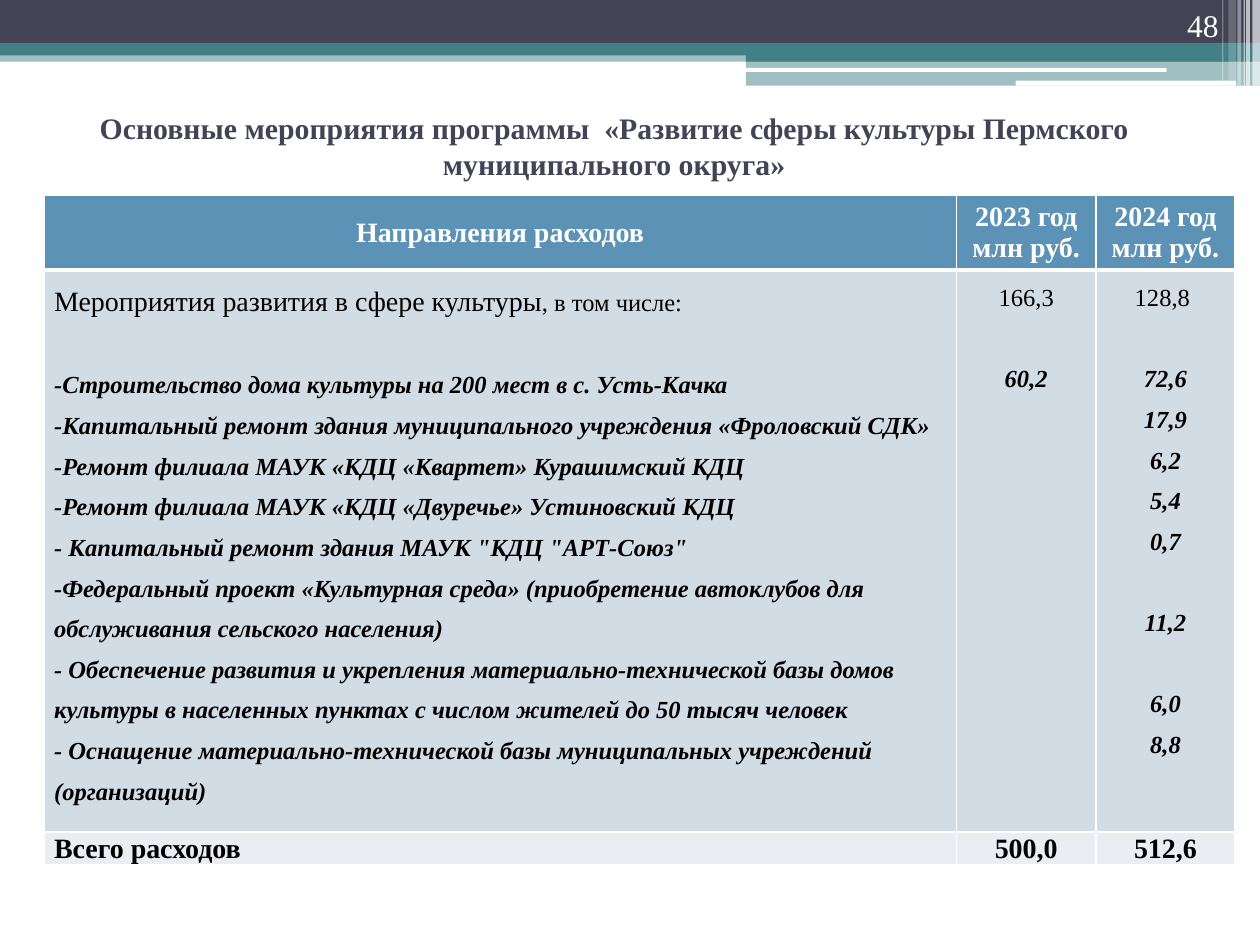
from lxml import etree
from pptx import Presentation
from pptx.dml.color import RGBColor
from pptx.enum.shapes import MSO_SHAPE
from pptx.enum.text import MSO_ANCHOR, PP_ALIGN
from pptx.oxml.ns import qn
from pptx.util import Inches, Pt

RECT, ROUND = MSO_SHAPE.RECTANGLE, MSO_SHAPE.ROUNDED_RECTANGLE
LEFT, CENTER, RIGHT = PP_ALIGN.LEFT, PP_ALIGN.CENTER, PP_ALIGN.RIGHT
TOP, MIDDLE, BOTTOM = MSO_ANCHOR.TOP, MSO_ANCHOR.MIDDLE, MSO_ANCHOR.BOTTOM
FONT = "Times New Roman"
COLORS = {
    "navy": "424456", "teal": "438086", "white": "FFFFFF", "black": "000000",
    "header": "5C92B5", "body": "D2DCE5", "total": "EAEEF3",
}
BANDS = [
    (0, 0.4, 10, 0.09, "teal", 50),
    (0, 0, 10, 0.34, "navy", 100),
    (0, 0.34, 10, 0.1, "teal", 100),
    (5.92, 0.39, 4.08, 0.1, "teal", 100),
    (5.92, 0.48, 4.08, 0.2, "teal", 50),
]
PILLS = [(5.91, 0.54, 3.35, 0.03), (8.06, 0.64, 1.75, 0.04)]
STRIPES = [
    (9.94, 0.06, 0.68, 65), (9.89, 0.03, 0.68, 65), (9.87, 0.01, 0.68, 60),
    (9.82, 0.03, 0.68, 40), (9.75, 0.06, 0.64, 20), (9.7, 0.01, 0.64, 30),
]
COL_WIDTHS = [7.24, 1.11, 1.1]
ROW_HEIGHTS = [0.58, 4.46, 0.26]
HEADERS = [["Направления расходов"], ["2023 год", "млн руб."], ["2024 год", "млн руб."]]
TOTALS = ["Всего расходов", "500,0", "512,6"]
MEASURES = [
    "-Строительство дома культуры на 200 мест в с. Усть-Качка",
    "-Капитальный ремонт здания муниципального учреждения «Фроловский СДК»",
    "-Ремонт филиала МАУК «КДЦ «Квартет» Курашимский КДЦ",
    "-Ремонт филиала МАУК «КДЦ «Двуречье» Устиновский КДЦ",
    '- Капитальный ремонт здания МАУК "КДЦ "АРТ-Союз"',
    "-Федеральный проект «Культурная среда» (приобретение автоклубов для "
    "обслуживания сельского населения)",
    "- Обеспечение развития и укрепления материально-технической базы домов "
    "культуры в населенных пунктах с числом жителей до 50 тысяч человек",
    "- Оснащение материально-технической базы муниципальных учреждений (организаций)",
]
VALUES_2024 = ["72,6", "17,9", "6,2", "5,4", "0,7", "11,2", "6,0", "8,8"]
AFTER_GAP = {"60,2", "72,6", "11,2", "6,0", MEASURES[0]}
LINE_GAP = 23.2


def rgb(name):
    """Return the named colour."""
    return RGBColor.from_string(COLORS[name])


def add_bar(s, x, y, w, h, color, alpha=100, shape=RECT):
    """Add a plain bar with the given opacity in percent."""
    sp = s.shapes.add_shape(shape, Inches(x), Inches(y), Inches(w), Inches(h))
    sp.shadow.inherit = False
    sp.fill.solid()
    sp.fill.fore_color.rgb = rgb(color)
    sp.line.fill.background()
    if alpha < 100:
        clr = sp.element.find(".//" + qn("a:srgbClr"))
        etree.SubElement(clr, qn("a:alpha"), val=str(alpha * 1000))


def add_text(tf, text, new=True, size=14, color="black", bold=False,
             italic=False, align=LEFT, spacing=None, before=0):
    """Write text as a paragraph, or as one more run of the last one."""
    p = tf.paragraphs[-1]
    if new:
        if p.runs:
            p = tf.add_paragraph()
        p.alignment = align
        p.line_spacing = spacing
        p.space_before = Pt(before)
    r = p.add_run()
    r.text = text
    r.font.name, r.font.size = FONT, Pt(size)
    r.font.bold, r.font.italic = bold, italic
    r.font.color.rgb = rgb(color)


def add_box(s, x, y, w, h, anchor):
    """Add a wrapping text box and return its text frame."""
    tf = s.shapes.add_textbox(Inches(x), Inches(y), Inches(w), Inches(h)).text_frame
    tf.word_wrap = True
    tf.vertical_anchor = anchor
    return tf


def style_cell(cell, fill, anchor, margins, bottom=1):
    """Set borders, fill, anchor and margins of a cell."""
    tc_pr = cell._tc.get_or_add_tcPr()
    for side, width in (("L", 1), ("R", 1), ("T", 1), ("B", bottom)):
        ln = etree.SubElement(tc_pr, qn("a:ln" + side), w=str(Pt(width)))
        solid = etree.SubElement(ln, qn("a:solidFill"))
        etree.SubElement(solid, qn("a:srgbClr"), val=COLORS["white"])
    cell.fill.solid()
    cell.fill.fore_color.rgb = rgb(fill)
    cell.vertical_anchor = anchor
    (cell.margin_left, cell.margin_top,
     cell.margin_right, cell.margin_bottom) = map(Inches, margins)


def add_items(tf, items, align):
    """Write the bold italic detail lines of a body cell."""
    for item in items:
        add_text(tf, item, bold=True, italic=True, align=align, spacing=1.5,
                 before=LINE_GAP if item in AFTER_GAP else 0)


def add_budget_table(s):
    """Add the table of spending by direction and year."""
    table = s.shapes.add_table(3, 3, Inches(0.35), Inches(1.55),
                               Inches(sum(COL_WIDTHS)), Inches(sum(ROW_HEIGHTS))).table
    for col, width in zip(table.columns, COL_WIDTHS):
        col.width = Inches(width)
    for row, height in zip(table.rows, ROW_HEIGHTS):
        row.height = Inches(height)
    for i in range(3):
        head, body, total = (table.cell(row, i) for row in range(3))
        margins = (0.01 if i else 0.08, 0.01, 0.01, 0)
        align = CENTER if i else LEFT
        style_cell(head, "header", MIDDLE, (0.1, 0.05, 0.1, 0.05), bottom=3)
        style_cell(body, "body", TOP, margins)
        style_cell(total, "total", MIDDLE, margins)
        for line in HEADERS[i]:
            add_text(head.text_frame, line, size=16, color="white", bold=True, align=CENTER)
        add_text(total.text_frame, TOTALS[i], size=16, bold=True, align=align)
    measures, year_2023, year_2024 = (table.cell(1, i).text_frame for i in range(3))
    add_text(measures, "Мероприятия развития в сфере культуры", size=16, spacing=1.5)
    add_text(measures, ", в том числе:", new=False)
    add_items(measures, MEASURES, LEFT)
    add_text(year_2023, "166,3", align=CENTER, spacing=1.5)
    add_items(year_2023, ["60,2"], CENTER)
    add_text(year_2024, "128,8 ", align=CENTER, spacing=1.5)
    add_items(year_2024, VALUES_2024, CENTER)


def main():
    """Build the slide and save it."""
    prs = Presentation()
    prs.slide_width, prs.slide_height = Inches(10), Inches(7.5)
    s = prs.slides.add_slide(prs.slide_layouts[6])
    for band in BANDS:
        add_bar(s, *band)
    for pill in PILLS:
        add_bar(s, *pill, "white", shape=ROUND)
    for x, w, h, alpha in STRIPES:
        add_bar(s, x, 0, w, h, "white", alpha)
    add_budget_table(s)
    add_text(add_box(s, 8.94, 0, 0.83, 0.4, BOTTOM), "48", size=18, color="white", align=RIGHT)
    add_text(add_box(s, 0.67, 0.92, 8.41, 0.47, MIDDLE),
             "Основные мероприятия программы  «Развитие сферы культуры Пермского "
             "муниципального округа»", size=17, color="navy", bold=True, align=CENTER)
    prs.save("out.pptx")


if __name__ == "__main__":
    main()
